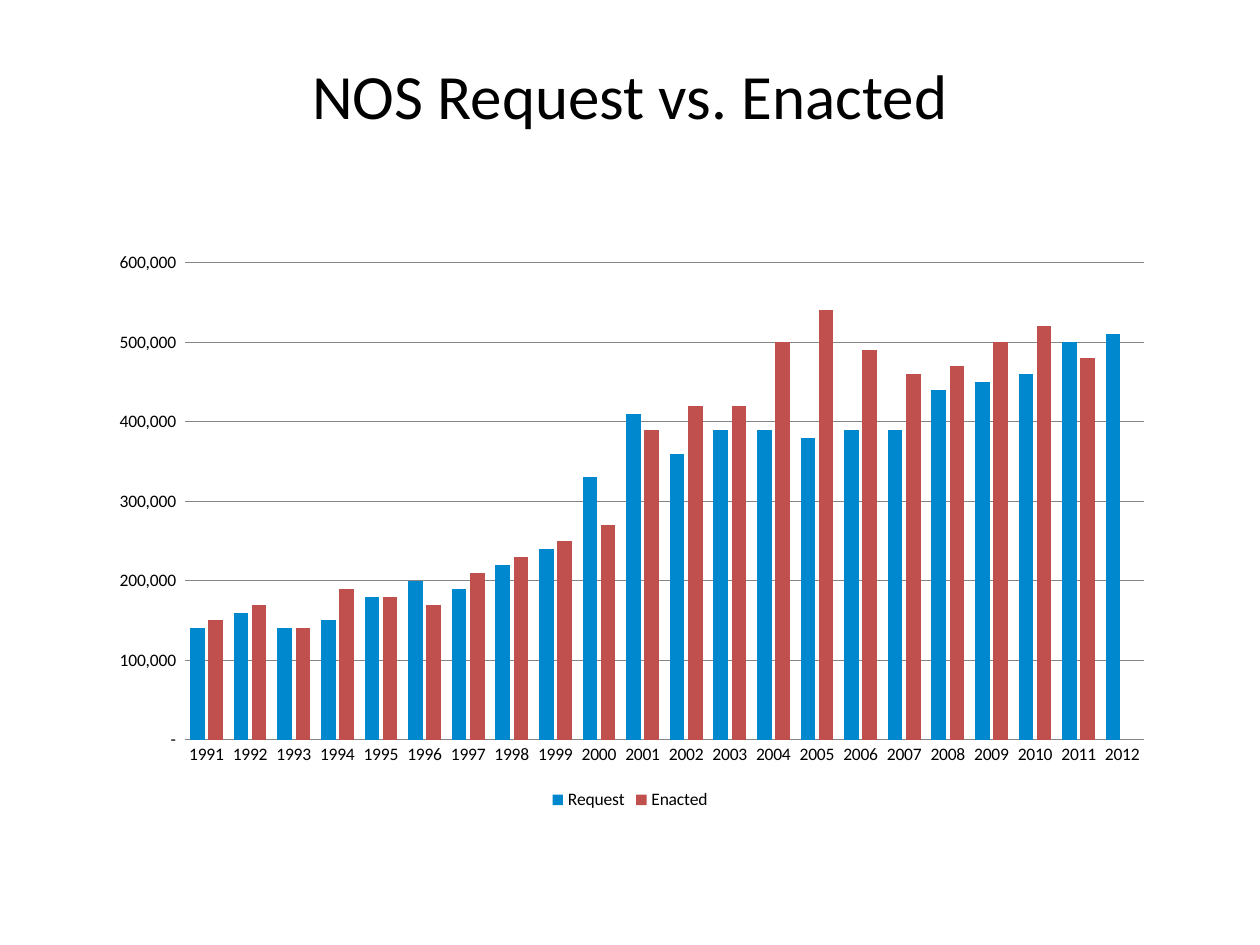
from pptx import Presentation
from pptx.chart.data import CategoryChartData
from pptx.dml.color import RGBColor
from pptx.enum.chart import XL_CHART_TYPE, XL_LEGEND_POSITION, XL_TICK_MARK
from pptx.enum.text import MSO_ANCHOR, PP_ALIGN
from pptx.util import Pt

CLUSTERED = XL_CHART_TYPE.COLUMN_CLUSTERED
BOTTOM = XL_LEGEND_POSITION.BOTTOM
NO_TICKS = XL_TICK_MARK.NONE
CENTER = PP_ALIGN.CENTER
MIDDLE = MSO_ANCHOR.MIDDLE

BLACK = RGBColor(0x00, 0x00, 0x00)
GRAY = RGBColor(0x86, 0x86, 0x86)
BLUE = RGBColor(0x00, 0x88, 0xCE)
RED = RGBColor(0xC0, 0x50, 0x4D)
FONT = "Calibri"
ACCOUNTING = '_(* #,##0_);_(* \\(#,##0\\);_(* "-"_);_(@_)'

YEARS = range(1991, 2013)
# Budgets in thousands; 2012 has no enacted figure
REQUEST = [140, 160, 140, 150, 180, 200, 190, 220, 240, 330, 410,
           360, 390, 390, 380, 390, 390, 440, 450, 460, 500, 510]
ENACTED = [150, 170, 140, 190, 180, 170, 210, 230, 250, 270, 390,
           420, 420, 500, 540, 490, 460, 470, 500, 520, 480, None]
BUDGETS = [("Request", REQUEST, BLUE), ("Enacted", ENACTED, RED)]


def format_font(font, size, color=BLACK):
    font.name = FONT
    font.size = Pt(size)
    font.color.rgb = color


def add_text(slide, text, box, *, size, color=BLACK, align=CENTER, anchor=MIDDLE):
    frame = slide.shapes.add_textbox(*map(Pt, box)).text_frame
    frame.word_wrap = True
    frame.vertical_anchor = anchor
    paragraph = frame.paragraphs[0]
    paragraph.alignment = align
    run = paragraph.add_run()
    run.text = text
    format_font(run.font, size, color)


def style_axes(chart):
    years, amounts = chart.category_axis, chart.value_axis
    for axis in (years, amounts):
        axis.major_tick_mark = NO_TICKS
        axis.minor_tick_mark = NO_TICKS
    years.format.line.color.rgb = GRAY
    amounts.minimum_scale = 0
    amounts.maximum_scale = 600000
    amounts.major_unit = 100000
    amounts.format.line.fill.background()
    amounts.has_major_gridlines = True
    amounts.major_gridlines.format.line.color.rgb = GRAY
    amounts.major_gridlines.format.line.width = Pt(0.75)
    amounts.tick_labels.number_format = ACCOUNTING
    amounts.tick_labels.number_format_is_linked = False


def add_budget_chart(slide, box):
    budget_data = CategoryChartData(number_format=ACCOUNTING)
    budget_data.categories = [str(year) for year in YEARS]
    for name, thousands, _ in BUDGETS:
        budget_data.add_series(
            name, [None if value is None else value * 1000 for value in thousands])
    chart = slide.shapes.add_chart(CLUSTERED, *map(Pt, box), budget_data).chart
    format_font(chart.font, 10)
    chart.has_title = False
    chart.has_legend = True
    chart.legend.position = BOTTOM
    chart.legend.include_in_layout = False
    style_axes(chart)

    columns = chart.plots[0]
    columns.gap_width = 75
    columns.overlap = -25
    columns.vary_by_categories = False
    for series, (_, _, color) in zip(columns.series, BUDGETS):
        series.invert_if_negative = False
        series.format.fill.solid()
        series.format.fill.fore_color.rgb = color


def main():
    deck = Presentation()
    deck.slide_width, deck.slide_height = Pt(720), Pt(540)
    slide = deck.slides.add_slide(deck.slide_layouts[6])
    add_text(slide, "NOS Request vs. Enacted", (54, 24, 612, 60), size=36)
    add_budget_chart(slide, (54, 138, 612, 327.6))
    deck.save("out.pptx")


if __name__ == "__main__":
    main()
